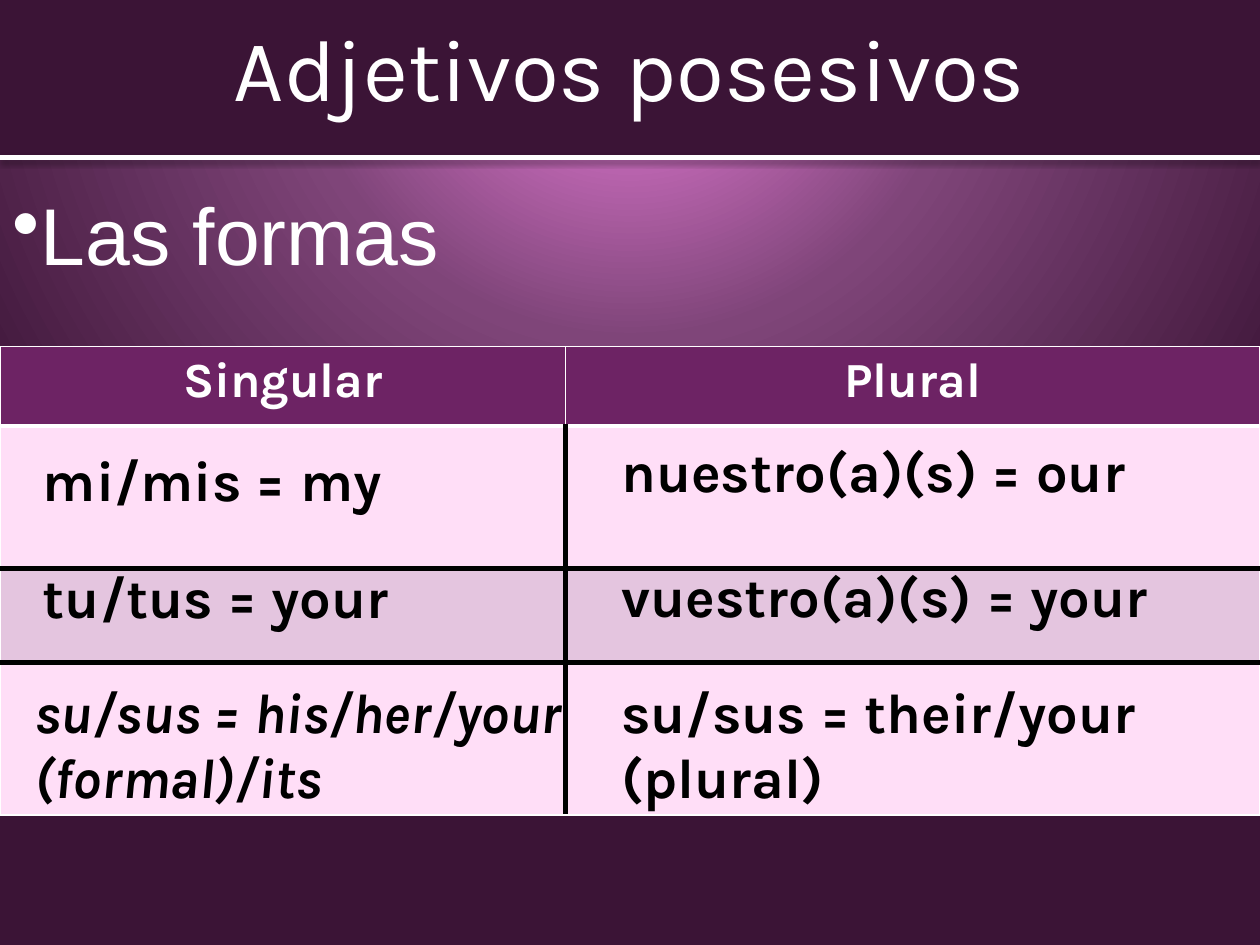
import lxml.etree
import pptx
import pptx.dml.color
import pptx.enum.shapes
import pptx.enum.text
import pptx.oxml
import pptx.oxml.ns
import pptx.util

Inches = pptx.util.Inches
Pt = pptx.util.Pt
RGBColor = pptx.dml.color.RGBColor
ALIGN = pptx.enum.text.PP_ALIGN
ANCHOR = pptx.enum.text.MSO_ANCHOR
qn = pptx.oxml.ns.qn
NAMESPACE = 'xmlns:a="http://schemas.openxmlformats.org/drawingml/2006/main"'
NO_STYLE = "{2D5ABB26-0587-4C30-8999-92F81FD0307C}"

WHITE = RGBColor(0xFF, 0xFF, 0xFF)
BLACK = RGBColor(0x00, 0x00, 0x00)
DARK_PLUM = RGBColor(0x3B, 0x14, 0x36)
PLUM = RGBColor(0x6D, 0x23, 0x64)
PALE_PINK = RGBColor(0xFF, 0xDE, 0xF7)
MAUVE = RGBColor(0xE4, 0xC5, 0xDF)
GLOW = RGBColor(0xF3, 0x83, 0xE3)
MID_GLOW = RGBColor(0x7F, 0x45, 0x79)


def write_text(frame, text, size, color, font="Karla", bold=False, italic=False, align=ALIGN.LEFT):
    para = frame.paragraphs[0]
    para.alignment = align
    span = para.add_run()
    span.text = text
    span.font.name = font
    span.font.size = Pt(size)
    span.font.bold = bold
    span.font.italic = italic
    span.font.color.rgb = color
    return para


def add_plain_table(page, left, top, widths, heights):
    frame = page.shapes.add_table(
        len(heights), len(widths), Inches(left), Inches(top), Inches(sum(widths)), Inches(sum(heights))
    )
    table = frame.table
    table.first_row = False
    table.horz_banding = False
    table._tbl.tblPr.find(qn("a:tableStyleId")).text = NO_STYLE
    for column, width in zip(table.columns, widths):
        column.width = Inches(width)
    for row, height in zip(table.rows, heights):
        row.height = Inches(height)
    return table


deck = pptx.Presentation()
deck.slide_width = Inches(10)
deck.slide_height = Inches(7.5)
page = deck.slides.add_slide(deck.slide_layouts[6])

backdrop = page.background.fill
backdrop.gradient()
gradient = page.background._cSld.find(".//" + qn("a:gradFill"))
for child in list(gradient):
    gradient.remove(child)
stops = "".join(
    f'<a:gs pos="{place * 1000}"><a:srgbClr val="{color}"/></a:gs>'
    for place, color in [(0, GLOW), (43, MID_GLOW), (100, DARK_PLUM)]
)
gradient.append(pptx.oxml.parse_xml(f"<a:gsLst {NAMESPACE}>{stops}</a:gsLst>"))
gradient.append(pptx.oxml.parse_xml(
    f'<a:path {NAMESPACE} path="circle"><a:fillToRect l="50000" t="-80000" r="50000" b="180000"/></a:path>'
))

banner = page.shapes.add_shape(
    pptx.enum.shapes.MSO_SHAPE.RECTANGLE, 0, 0, Inches(10), Inches(1.25)
)
banner.shadow.inherit = False
banner.fill.solid()
banner.fill.fore_color.rgb = DARK_PLUM
banner.line.fill.background()

subtitle = page.shapes.add_textbox(0, Inches(1.42), Inches(10), Inches(5.88))
subtitle.text_frame.word_wrap = True
para = write_text(subtitle.text_frame, "Las formas", 46, WHITE, font="Arial")
para.space_after = Pt(72)
properties = para._p.get_or_add_pPr()
properties.insert(0, pptx.oxml.parse_xml(
    f'<a:spcBef {NAMESPACE}><a:spcPct val="20000"/></a:spcBef>'
))
properties.append(pptx.oxml.parse_xml(f'<a:buChar {NAMESPACE} char="•"/>'))

rule = page.shapes.add_connector(
    pptx.enum.shapes.MSO_CONNECTOR.STRAIGHT, 0, Inches(1.25), Inches(10), Inches(1.25)
)
rule.line.color.rgb = WHITE
rule.line.width = Pt(3)
rule._element.spPr.append(pptx.oxml.parse_xml(
    f'<a:effectLst {NAMESPACE}><a:outerShdw blurRad="{Pt(3.1)}" dist="{Pt(1.6)}" dir="5400000" rotWithShape="0">'
    f'<a:srgbClr val="{BLACK}"><a:alpha val="38000"/></a:srgbClr></a:outerShdw></a:effectLst>'
))

title = page.shapes.add_textbox(0, 0, Inches(10), Inches(1.06))
title.text_frame.word_wrap = True
title.text_frame.vertical_anchor = ANCHOR.MIDDLE
write_text(title.text_frame, "Adjetivos posesivos", 50, WHITE, align=ALIGN.CENTER)

grid = add_plain_table(page, 0, 2.75, [4.49, 5.51], [0.63, 1.13, 0.75, 1.21])
thin = (WHITE, 1)
header_rule = (WHITE, 3)
thick = (BLACK, 3)
for row, fill in enumerate([PLUM, PALE_PINK, MAUVE, PALE_PINK]):
    above = [thin, header_rule, thick, thick][row]
    below = [header_rule, thick, thick, thin][row]
    middle = thick if row else thin
    for column in range(2):
        cell = grid.cell(row, column)
        sides = {
            "L": middle if column else thin,
            "R": thin if column else middle,
            "T": above,
            "B": below,
        }
        for side, (color, width) in sides.items():
            cell._tc.get_or_add_tcPr().append(pptx.oxml.parse_xml(
                f'<a:ln{side} {NAMESPACE} w="{Pt(width)}"><a:solidFill>'
                f'<a:srgbClr val="{color}"/></a:solidFill></a:ln{side}>'
            ))
        cell.fill.solid()
        cell.fill.fore_color.rgb = fill
for column, heading in enumerate(["Singular", "Plural"]):
    write_text(grid.cell(0, column).text_frame, heading, 28, WHITE, bold=True, align=ALIGN.CENTER)

forms = [
    ("mi/mis = my", 0.24, 3.52, 3.55, 0.63, False),
    ("tu/tus = your", 0.24, 4.45, 3.95, 0.63, False),
    ("su/sus = his/her/your (formal)/its", 0.17, 5.36, 4.62, 1.18, True),
    ("nuestro(a)(s) = our", 4.83, 3.45, 4.85, 0.68, False),
    ("vuestro(a)(s) = your", 4.83, 4.44, 5.17, 0.63, False),
    ("su/sus = their/your (plural)", 4.83, 5.36, 4.85, 1.17, False),
]
for text, left, top, width, height, italic in forms:
    cell = add_plain_table(page, left, top, [width], [height]).cell(0, 0)
    cell.fill.background()
    write_text(cell.text_frame, text, 32, BLACK, bold=True, italic=italic)

deck.save("out.pptx")
